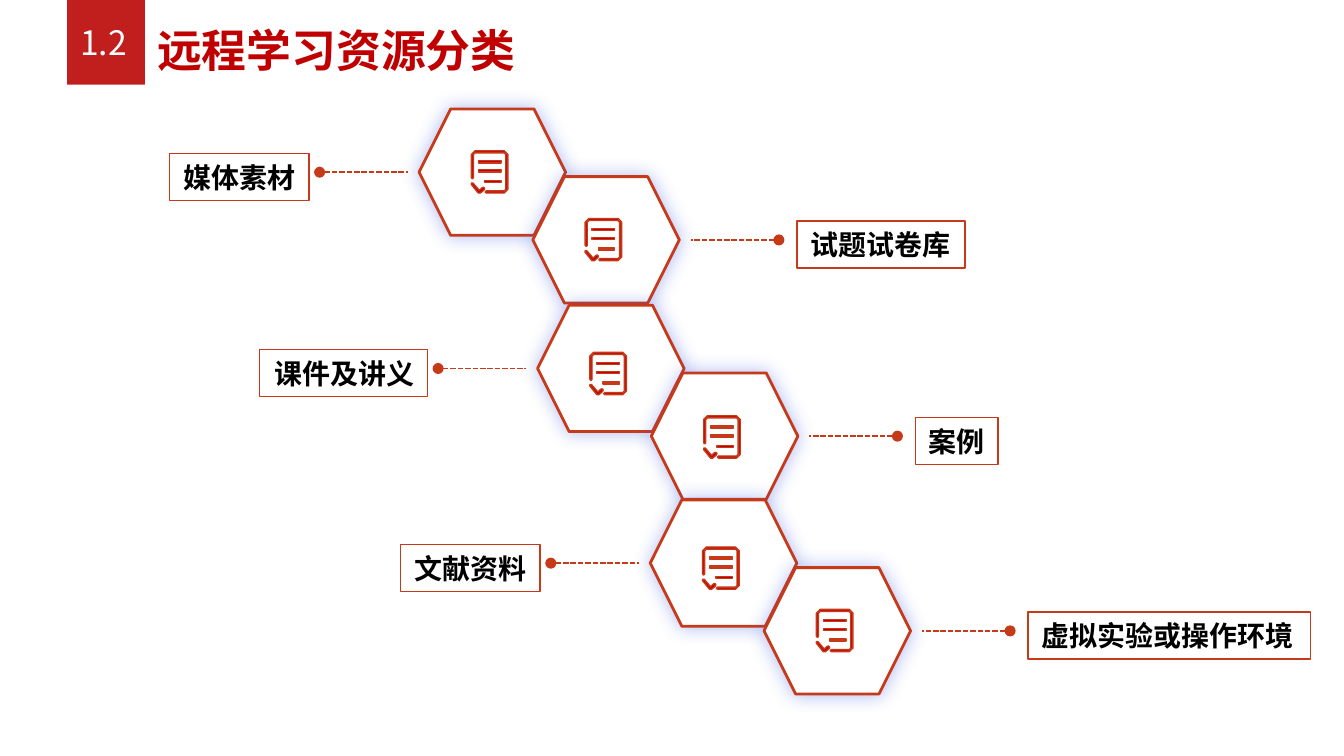
from dataclasses import dataclass

from lxml.etree import SubElement
from pptx import Presentation
from pptx.dml.color import RGBColor
from pptx.enum.dml import MSO_LINE
from pptx.enum.shapes import MSO_CONNECTOR, MSO_SHAPE
from pptx.enum.text import MSO_ANCHOR, PP_ALIGN
from pptx.oxml.ns import qn
from pptx.util import Cm, Pt


@dataclass(frozen=True)
class Theme:
    font: str = "Noto Sans CJK SC"
    white: RGBColor = RGBColor(0xFF, 0xFF, 0xFF)
    black: RGBColor = RGBColor(0, 0, 0)
    title: RGBColor = RGBColor(0xC0, 0, 0)
    badge: RGBColor = RGBColor(0xC1, 0x1E, 0x1E)
    outline: RGBColor = RGBColor(0xC7, 0x3A, 0x19)
    glow: str = "3C5CE8"
    title_size: Pt = Pt(24)
    badge_size: Pt = Pt(18)
    label_size: Pt = Pt(15)


THEME = Theme()

# Layout, in centimetres
HEXAGON_WIDTH, HEXAGON_HEIGHT = 2.77, 2.39
PAIR_STEP = (2.15, 1.28)
LINE_GAP, LINE_LENGTH = 0.21, 1.67
LABEL_DROP, LABEL_HEIGHT = 0.84, 0.89
ICON_INDENT = 0.99

# Each pair: corner of its left hexagon, then (label, icon drop) left and right
PAIRS = [
    ((7.92, 2.06), ("媒体素材", 0.79), ("试题试卷库", 0.79)),
    ((10.16, 5.77), ("课件及讲义", 0.89), ("案例", 0.81)),
    ((12.29, 9.45), ("文献资料", 0.89), ("虚拟实验或操作环境", 0.79)),
]


def bar(left, top, right, bottom):
    return [(left, top), (right, top), (right, bottom), (left, bottom)]


# Document icon, in hundredths of a centimetre
ICON_CONTOURS = [
    [(28, 80), (62, 80), (69, 73), (69, 7), (62, 0), (7, 0), (0, 7), (0, 51),
     (2, 53), (4, 51), (4, 7), (7, 4), (62, 4), (65, 7), (65, 73), (62, 76),
     (28, 76), (26, 78)],
    bar(25, 56, 56, 60),
    bar(13, 36, 56, 40),
    bar(13, 19, 56, 23),
    [(0, 61), (3, 61), (15, 75), (20, 70), (23, 69), (25, 71), (24, 74),
     (17, 80), (13, 80), (0, 64)],
]


def apply_format(target, values):
    for name, value in values.items():
        setattr(target, name, value)


def paint(shape, fill=None, line_width=None):
    """Give a shape its fill and outline; None means no fill or no line."""
    shape.shadow.inherit = False
    if fill is None:
        shape.fill.background()
    else:
        shape.fill.solid()
        shape.fill.fore_color.rgb = fill
    if line_width is None:
        shape.line.fill.background()
    else:
        shape.line.color.rgb = THEME.outline
        shape.line.width = Pt(line_width)


def write_text(shape, text, size, color, bold, alignment, wrap):
    apply_format(shape.text_frame, {
        "word_wrap": wrap, "vertical_anchor": MSO_ANCHOR.MIDDLE,
    })
    paragraph = shape.text_frame.paragraphs[0]
    paragraph.alignment = alignment
    run = paragraph.add_run()
    run.text = text
    apply_format(run.font, {"name": THEME.font, "size": size, "bold": bold})
    run.font.color.rgb = color
    SubElement(run.font._element, qn("a:ea"), typeface=THEME.font)


def add_header(slide):
    title = slide.shapes.add_textbox(Cm(2.72), Cm(0.3), Cm(18.54), Cm(1.27))
    write_text(title, "远程学习资源分类", THEME.title_size, THEME.title,
               True, PP_ALIGN.JUSTIFY, True)
    badge = slide.shapes.add_shape(
        MSO_SHAPE.RECTANGLE, Cm(1.27), 0, Cm(1.47), Cm(1.6))
    paint(badge, THEME.badge)
    write_text(badge, "1.2", THEME.badge_size, THEME.white,
               False, PP_ALIGN.JUSTIFY, True)


def add_hexagon(slide, left, top):
    hexagon = slide.shapes.add_shape(
        MSO_SHAPE.HEXAGON, Cm(left), Cm(top),
        Cm(HEXAGON_WIDTH), Cm(HEXAGON_HEIGHT))
    paint(hexagon, THEME.white, 1.5)
    # Soft blue glow, as a shadow without offset
    effects = hexagon._element.spPr.find(qn("a:effectLst"))
    shadow = SubElement(effects, qn("a:outerShdw"), blurRad=str(Pt(10)),
                        dist="0", dir="0", algn="ctr", rotWithShape="0")
    color = SubElement(shadow, qn("a:srgbClr"), val=THEME.glow)
    SubElement(color, qn("a:alpha"), val="40000")


def add_dotted_line(slide, dot_x, end_x, y):
    connector = slide.shapes.add_connector(
        MSO_CONNECTOR.STRAIGHT, Cm(dot_x), Cm(y), Cm(end_x), Cm(y))
    connector.line.color.rgb = THEME.outline
    apply_format(connector.line, {
        "width": Pt(1), "dash_style": MSO_LINE.SQUARE_DOT,
    })
    SubElement(connector.line._get_or_add_ln(), qn("a:headEnd"), type="oval")
    SubElement(connector._element.spPr, qn("a:effectLst"))


def add_label(slide, text, left, top, width, alignment):
    label = slide.shapes.add_shape(
        MSO_SHAPE.RECTANGLE, Cm(left), Cm(top), Cm(width), Cm(LABEL_HEIGHT))
    paint(label, line_width=0.75)
    write_text(label, text, THEME.label_size, THEME.black,
               True, alignment, False)


def add_icon(slide, left, top):
    first, *others = ICON_CONTOURS
    builder = slide.shapes.build_freeform(*first[0], scale=Cm(0.01))
    builder.add_line_segments(first[1:], close=True)
    for contour in others:
        builder.move_to(*contour[0])
        builder.add_line_segments(contour[1:], close=True)
    paint(builder.convert_to_shape(Cm(left), Cm(top)), THEME.title, 0.75)


def add_resource(slide, left, top, text, icon_drop, on_left):
    """Draw a hexagon with its icon, and a label on its outer side."""
    add_hexagon(slide, left, top)
    label_width = 0.54 * len(text) + 0.48
    if on_left:
        line_end = left - LINE_GAP
        dot = line_end - LINE_LENGTH
        label_left = dot - 0.2 - label_width
        alignment = PP_ALIGN.RIGHT
    else:
        line_end = left + HEXAGON_WIDTH + LINE_GAP
        dot = line_end + LINE_LENGTH
        label_left = dot + 0.34
        alignment = PP_ALIGN.LEFT
    add_dotted_line(slide, dot, line_end, top + HEXAGON_HEIGHT / 2)
    add_label(slide, text, label_left, top + LABEL_DROP, label_width, alignment)
    add_icon(slide, left + ICON_INDENT, top + icon_drop)


def main():
    presentation = Presentation()
    apply_format(presentation, {
        "slide_width": Cm(25.4), "slide_height": Cm(14.29),
    })
    slide = presentation.slides.add_slide(presentation.slide_layouts[6])
    slide.background.fill.solid()
    slide.background.fill.fore_color.rgb = THEME.white

    add_header(slide)

    # Staircase of hexagon pairs
    for (left, top), left_resource, right_resource in PAIRS:
        add_resource(slide, left, top, *left_resource, on_left=True)
        add_resource(slide, left + PAIR_STEP[0], top + PAIR_STEP[1],
                     *right_resource, on_left=False)

    presentation.save("out.pptx")


if __name__ == "__main__":
    main()
